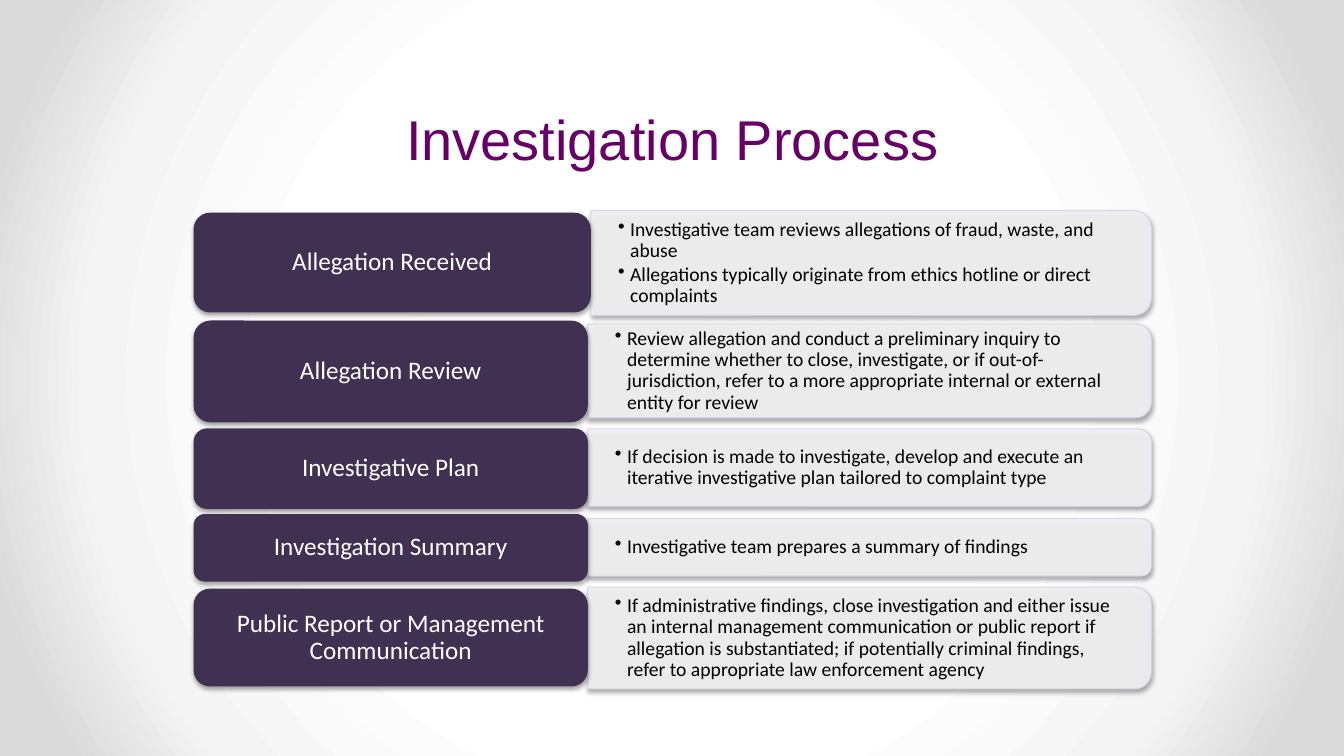
from lxml import etree
from pptx import Presentation
from pptx.dml.color import RGBColor
from pptx.enum.shapes import MSO_SHAPE
from pptx.enum.text import MSO_ANCHOR, MSO_AUTO_SIZE, PP_ALIGN
from pptx.oxml import parse_xml
from pptx.oxml.ns import nsdecls, qn
from pptx.util import Inches, Pt

ROUNDED = MSO_SHAPE.ROUNDED_RECTANGLE
TWO_CORNERS = MSO_SHAPE.ROUND_2_SAME_RECTANGLE
MIDDLE, BOTTOM = MSO_ANCHOR.MIDDLE, MSO_ANCHOR.BOTTOM
CENTER = PP_ALIGN.CENTER
NO_FIT = MSO_AUTO_SIZE.NONE


class Theme:
    title = RGBColor(0x66, 0x00, 0x66)
    label = RGBColor(0x40, 0x31, 0x52)
    label_text = RGBColor(0xFF, 0xFF, 0xFF)
    panel = RGBColor(0xF2, 0xF2, 0xF2)
    panel_line = RGBColor(0xD2, 0xD6, 0xE5)
    panel_text = RGBColor(0x00, 0x00, 0x00)
    background = [(50, "FFFFFF"), (76, "F4F4F4"), (92, "DADADA")]
    title_font, body_font = "Arial", "Calibri"
    title_size, label_size, panel_size = Pt(40), Pt(18), Pt(14)


def add_run(p, text, font, size, color):
    r = p.add_run()
    r.text = text
    r.font.name = font
    r.font.size = size
    r.font.color.rgb = color


def add_shadow(sp):
    sp.shadow.inherit = False
    effects = sp.element.spPr.find(qn("a:effectLst"))
    effects.append(parse_xml(
        f'<a:outerShdw {nsdecls("a")} blurRad="{Pt(3.1)}" dist="{Pt(1.8)}" '
        'dir="5400000" rotWithShape="0"><a:srgbClr val="000000">'
        '<a:alpha val="35000"/></a:srgbClr></a:outerShdw>'))


prs = Presentation()
prs.slide_width, prs.slide_height = Inches(13.33), Inches(7.5)
s = prs.slides.add_slide(prs.slide_layouts[5])

# Radial background
stops = "".join(f'<a:gs pos="{pos * 1000}"><a:srgbClr val="{color}"/></a:gs>'
                for pos, color in Theme.background)
s.element.cSld.insert(0, parse_xml(
    f'<p:bg {nsdecls("p", "a")}><p:bgPr><a:gradFill rotWithShape="1">'
    f'<a:gsLst>{stops}</a:gsLst><a:path path="circle">'
    '<a:fillToRect l="50000" t="50000" r="50000" b="50000"/></a:path>'
    '</a:gradFill><a:effectLst/></p:bgPr></p:bg>'))

# Title
title = s.shapes.title
title.left, title.top = Inches(0.33), Inches(0)
title.width, title.height = Inches(12.67), Inches(1.75)
tf = title.text_frame
tf.auto_size = NO_FIT
tf.vertical_anchor = BOTTOM
p = tf.paragraphs[0]
p.alignment = CENTER
p.line_spacing = Pt(58)
add_run(p, "Investigation Process", Theme.title_font, Theme.title_size, Theme.title)

# Steps: label, its top, width and height, panel centre and height, bullets
steps = [
    ("Allegation Received", 2.11, 3.94, 0.99, 2.61, 1.04,
     ["Investigative team reviews allegations of fraud, waste, and abuse",
      "Allegations typically originate from ethics hotline or direct complaints"]),
    ("Allegation Review", 3.18, 3.91, 1.01, 3.68, 0.93,
     ["Review allegation and conduct a preliminary inquiry to determine whether "
      "to close, investigate, or if out-of- jurisdiction, refer to a more "
      "appropriate internal or external entity for review"]),
    ("Investigative Plan", 4.25, 3.91, 0.8, 4.64, 0.77,
     ["If decision is made to investigate, develop and execute an iterative "
      "investigative plan tailored to complaint type"]),
    ("Investigation Summary", 5.1, 3.91, 0.67, 5.43, 0.57,
     ["Investigative team prepares a summary of findings"]),
    ("Public Report or Management Communication", 5.84, 3.91, 0.97, 6.33, 1.01,
     ["If administrative findings, close investigation and either issue an "
      "internal management communication or public report if allegation is "
      "substantiated; if potentially criminal findings, refer to appropriate "
      "law enforcement agency"]),
]
label_left, panel_right = 1.92, 11.42

for name, top, label_w, label_h, center_y, panel_h, bullets in steps:
    panel_left = label_left + label_w
    panel_w = panel_right - panel_left
    center_x = panel_left + panel_w / 2

    # Panel, turned so that its round corners face right
    panel = s.shapes.add_shape(
        TWO_CORNERS, Inches(center_x - panel_h / 2), Inches(center_y - panel_w / 2),
        Inches(panel_h), Inches(panel_w))
    panel.rotation = 90
    panel.fill.solid()
    panel.fill.fore_color.rgb = Theme.panel
    panel.line.color.rgb = Theme.panel_line
    panel.line.width = Pt(0.75)
    for color in panel.element.spPr.iter(qn("a:srgbClr")):
        etree.SubElement(color, qn("a:alpha")).set("val", "90000")
    add_shadow(panel)

    # Bullets
    box = s.shapes.add_textbox(Inches(panel_left), Inches(center_y - panel_h / 2),
                               Inches(panel_w - 0.05), Inches(panel_h))
    tf = box.text_frame
    tf.word_wrap = True
    tf.vertical_anchor = MIDDLE
    tf.margin_left = tf.margin_right = Inches(0.27)
    tf.margin_top = tf.margin_bottom = Inches(0)
    for i, text in enumerate(bullets):
        p = tf.add_paragraph() if i else tf.paragraphs[0]
        p.line_spacing = 0.9
        p.space_after = Pt(2)
        pPr = p._p.get_or_add_pPr()
        pPr.set("marL", str(Inches(0.12)))
        pPr.set("indent", str(Inches(-0.12)))
        etree.SubElement(pPr, qn("a:buChar")).set("char", "•")
        add_run(p, text, Theme.body_font, Theme.panel_size, Theme.panel_text)

    # Label
    label = s.shapes.add_shape(ROUNDED, Inches(label_left), Inches(top),
                               Inches(label_w), Inches(label_h))
    label.fill.solid()
    label.fill.fore_color.rgb = Theme.label
    label.line.fill.background()
    add_shadow(label)
    tf = label.text_frame
    tf.word_wrap = True
    tf.vertical_anchor = MIDDLE
    tf.margin_left = tf.margin_right = Inches(0.07)
    tf.margin_top = tf.margin_bottom = Inches(0.04)
    p = tf.paragraphs[0]
    p.alignment = CENTER
    p.line_spacing = 0.9
    add_run(p, name, Theme.body_font, Theme.label_size, Theme.label_text)

prs.save("out.pptx")
